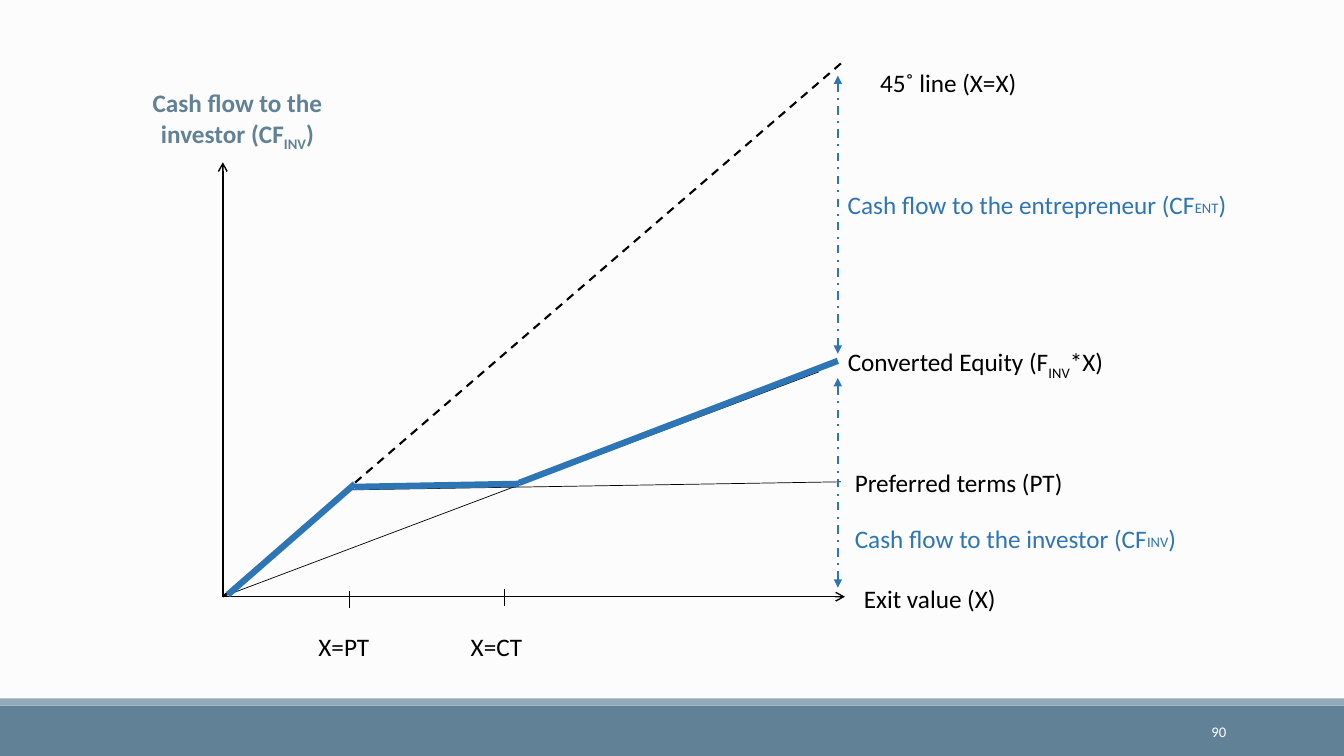
"""Build the slide on investor and entrepreneur cash flows by exit value."""
import pptx
import pptx.dml.color
import pptx.enum.dml
import pptx.enum.shapes
import pptx.enum.text
import pptx.oxml
import pptx.oxml.ns
import pptx.util
from pptx.util import Inches

COLORS = {
    "background": "FCFCFC",
    "slate": "618197",
    "light_slate": "92A9B9",
    "black": "000000",
    "blue": "2E75B6",
    "white": "FFFFFF",
}
ALIGN = pptx.enum.text.PP_ALIGN
DASH = pptx.enum.dml.MSO_LINE
SUBSCRIPT = -25000
SMALL = 3000


def rgb(name):
    return pptx.dml.color.RGBColor.from_string(COLORS[name])


def add_element(parent, tag, **attributes):
    element = pptx.oxml.parse_xml(f"<a:{tag} {pptx.oxml.ns.nsdecls('a')}/>")
    for key, value in attributes.items():
        element.set(key, value)
    parent.append(element)


def add_band(s, top, height, color):
    sp = s.shapes.add_shape(
        pptx.enum.shapes.MSO_SHAPE.RECTANGLE,
        0, Inches(top), Inches(13.33), Inches(height))
    sp.shadow.inherit = False
    sp.fill.solid()
    sp.fill.fore_color.rgb = rgb(color)
    sp.line.fill.background()


def add_line(s, start, end, width, color="black", dash=None, head=None, tail=None):
    c = s.shapes.add_connector(
        pptx.enum.shapes.MSO_CONNECTOR.STRAIGHT,
        *(Inches(v) for v in (*start, *end)))
    c.line.color.rgb = rgb(color)
    c.line.width = pptx.util.Pt(width)
    if dash:
        c.line.dash_style = dash
    spPr = c.element.spPr
    for tag, arrow in (("headEnd", head), ("tailEnd", tail)):
        if arrow:
            add_element(spPr.get_or_add_ln(), tag, type=arrow)
    add_element(spPr, "effectLst")


def add_label(s, box, text, color="black", sub="", rest="", baseline=SUBSCRIPT,
              size=18, bold=False, align=ALIGN.LEFT, middle=False):
    tf = s.shapes.add_textbox(*(Inches(v) for v in box)).text_frame
    tf.word_wrap = True
    if middle:
        tf.vertical_anchor = pptx.enum.text.MSO_ANCHOR.MIDDLE
    p = tf.paragraphs[0]
    p.alignment = align
    p.font.name = "Calibri"
    p.font.size = pptx.util.Pt(size)
    p.font.bold = bold
    p.font.color.rgb = rgb(color)
    for part, offset in ((text, 0), (sub, baseline), (rest, 0)):
        if part:
            r = p.add_run()
            r.text = part
            if offset:
                r.font.element.set("baseline", str(offset)) if hasattr(
                    r.font, "element") else r._r.get_or_add_rPr().set(
                    "baseline", str(offset))


def add_axes(s, origin):
    add_line(s, (origin[0], 1.61), origin, 1, head="arrow")
    add_line(s, (8.38, origin[1]), origin, 1, head="arrow")
    for x, bottom in ((3.47, 6.03), (5, 6.01)):
        add_line(s, (x, bottom), (x, bottom - 0.17), 0.5)


def add_payoffs(s, origin):
    add_line(s, (8.34, 0.63), origin, 1.5, dash=DASH.DASH)
    add_line(s, (8.12, 3.69), origin, 0.5)
    add_line(s, (8.34, 4.78), (3.47, 4.86), 0.5)
    for bottom, top in ((5.83, 3.75), (3.51, 0.75)):
        add_line(s, (8.31, bottom), (8.31, top), 1.5, "blue",
                 DASH.DASH_DOT, "triangle", "triangle")
    for start, end in (((8.31, 3.58), (5.15, 4.79)),
                       ((5.15, 4.8), (3.52, 4.83)),
                       ((2.26, 5.9), (3.52, 4.8))):
        add_line(s, start, end, 4.5, "blue")


def add_labels(s):
    add_label(s, (1.06, 0.82, 2.59, 0.71), "Cash flow to the investor (CF",
              "slate", "INV", ")", bold=True, align=ALIGN.CENTER)
    add_label(s, (8.63, 0.62, 3.28, 0.4), "45˚ line (X=X)")
    add_label(s, (8.31, 3.39, 3.28, 0.4), "Converted Equity (F",
              sub="INV", rest="*X)")
    add_label(s, (8.38, 4.59, 2.3, 0.4), "Preferred terms (PT)")
    add_label(s, (8.47, 5.74, 2.2, 0.4), "Exit value (X)")
    add_label(s, (3.06, 6.21, 0.81, 0.4), "X=PT")
    add_label(s, (4.57, 6.21, 1.19, 0.4), "X=CT")
    add_label(s, (8.31, 1.83, 4.33, 0.4), "Cash flow to the entrepreneur (CF",
              "blue", "ENT", ")", SMALL)
    add_label(s, (8.38, 5.14, 4.12, 0.4), "Cash flow to the investor (CF",
              "blue", "INV", ")", SMALL)
    add_label(s, (10.83, 7.06, 1.43, 0.4), "90", "white", size=10.5,
              align=ALIGN.RIGHT, middle=True)


def main():
    prs = pptx.Presentation()
    prs.slide_width, prs.slide_height = Inches(13.33), Inches(7.5)
    s = prs.slides.add_slide(prs.slide_layouts[6])
    s.background.fill.solid()
    s.background.fill.fore_color.rgb = rgb("background")
    add_band(s, 7, 0.5, "slate")
    add_band(s, 6.93, 0.07, "light_slate")
    origin = (2.21, 5.92)
    add_axes(s, origin)
    add_payoffs(s, origin)
    add_labels(s)
    prs.save("out.pptx")


if __name__ == "__main__":
    main()
